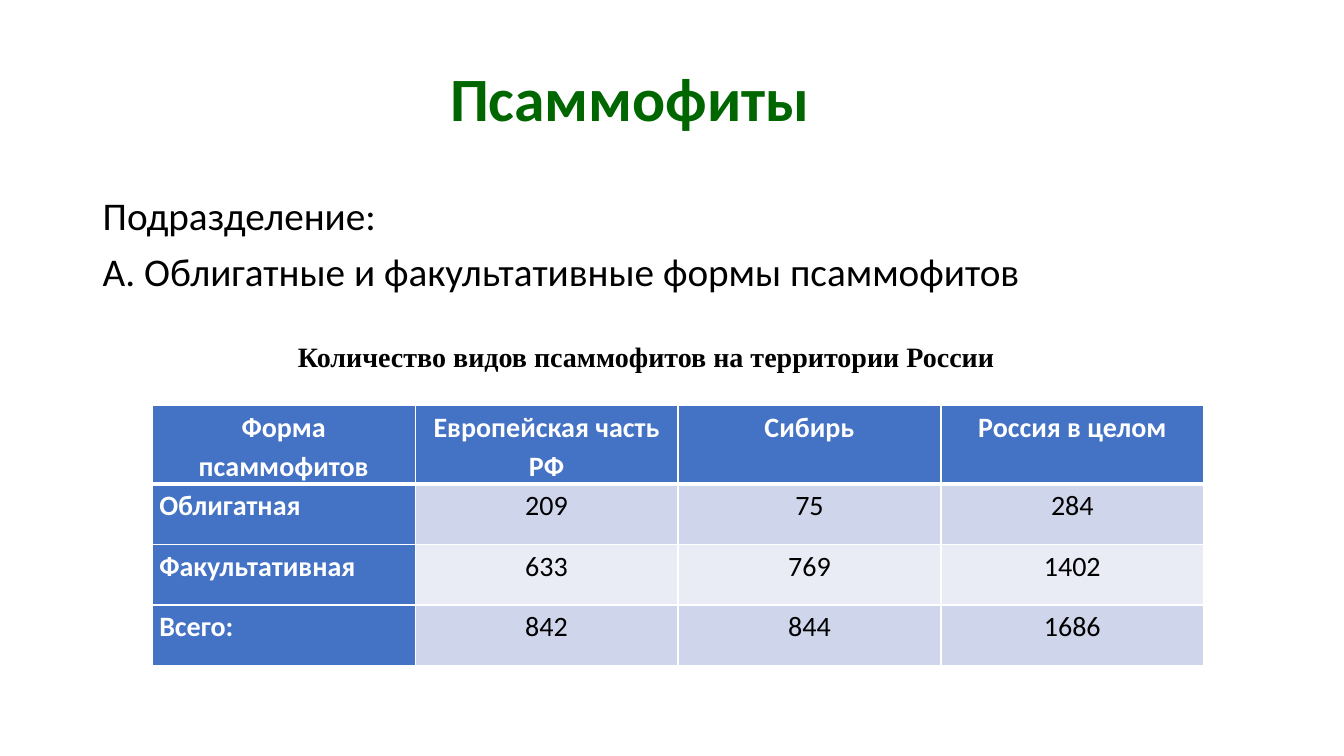
from pptx import Presentation
from pptx.dml.color import RGBColor
from pptx.enum.shapes import MSO_SHAPE
from pptx.enum.text import MSO_ANCHOR, MSO_AUTO_SIZE, PP_ALIGN
from pptx.oxml import parse_xml
from pptx.oxml.ns import nsdecls
from pptx.util import Inches, Pt

TITLE = "Псаммофиты"
BODY = ["Подразделение:", "А. Облигатные и факультативные формы псаммофитов"]
CAPTION = "Количество видов псаммофитов на территории России"
TABLE_ROWS = [
    ("Форма псаммофитов", "Европейская часть РФ", "Сибирь", "Россия в целом"),
    ("Облигатная", "209", "75", "284"),
    ("Факультативная", "633", "769", "1402"),
    ("Всего:", "842", "844", "1686"),
]

GREEN = RGBColor(0x00, 0x66, 0x00)
BLACK = RGBColor(0x00, 0x00, 0x00)
WHITE = RGBColor(0xFF, 0xFF, 0xFF)
BLUE = RGBColor(0x44, 0x72, 0xC4)
BAND_DARK = RGBColor(0xCF, 0xD5, 0xEA)
BAND_LIGHT = RGBColor(0xE9, 0xEB, 0xF5)

RECTANGLE = MSO_SHAPE.RECTANGLE
LEFT, CENTER, JUSTIFY = PP_ALIGN.LEFT, PP_ALIGN.CENTER, PP_ALIGN.JUSTIFY
TOP, MIDDLE = MSO_ANCHOR.TOP, MSO_ANCHOR.MIDDLE
GROW = MSO_AUTO_SIZE.SHAPE_TO_FIT_TEXT

TABLE_WIDTH, ROW_HEIGHT = 10.43, 0.6
CELL_MARGIN = Inches(0.07)


def style_paragraph(paragraph, size, color, bold, align, spacing, font_name="Calibri"):
    paragraph.alignment = align
    paragraph.line_spacing = spacing
    font = paragraph.font
    font.name, font.size, font.bold = font_name, Pt(size), bold
    font.color.rgb = color


def fill_text(shape, lines, anchor, *style):
    frame = shape.text_frame
    frame.word_wrap = True
    frame.vertical_anchor = anchor
    frame.text = "\n".join(lines)
    for index, paragraph in enumerate(frame.paragraphs):
        if index:
            paragraph.space_before = Pt(10)
        style_paragraph(paragraph, *style)
    return frame


def add_panel(slide, box):
    """Add a white rectangle without outline to hold text."""
    shape = slide.shapes.add_shape(RECTANGLE, *map(Inches, box))
    shape.shadow.inherit = False
    shape.fill.solid()
    shape.fill.fore_color.rgb = WHITE
    shape.line.fill.background()
    return shape


def set_borders(cell, top_width, bottom_width):
    """Draw white cell borders: 1 pt at the sides, chosen points above and below."""
    properties = cell._tc.get_or_add_tcPr()
    widths = {"lnL": 1, "lnR": 1, "lnT": top_width, "lnB": bottom_width}
    for position, (side, width) in enumerate(widths.items()):
        properties.insert(position, parse_xml(
            f'<a:{side} {nsdecls("a")} w="{Pt(width)}"><a:solidFill>'
            f'<a:srgbClr val="{WHITE}"/></a:solidFill></a:{side}>'))


def add_species_table(slide):
    row_count, column_count = len(TABLE_ROWS), len(TABLE_ROWS[0])
    table = slide.shapes.add_table(
        row_count, column_count, Inches(1.51), Inches(4.02),
        Inches(TABLE_WIDTH), Inches(ROW_HEIGHT * row_count)).table
    for row, values in enumerate(TABLE_ROWS):
        for column, value in enumerate(values):
            cell = table.cell(row, column)
            is_heading = row == 0 or column == 0
            band = BAND_DARK if row % 2 else BAND_LIGHT
            cell.fill.solid()
            cell.fill.fore_color.rgb = BLUE if is_heading else band
            cell.margin_left = cell.margin_right = CELL_MARGIN
            cell.margin_top = cell.margin_bottom = 0
            cell.text = value
            style_paragraph(cell.text_frame.paragraphs[0], 20,
                            WHITE if is_heading else BLACK, is_heading,
                            JUSTIFY if row and column == 0 else CENTER, 1.15)
            set_borders(cell, 3 if row == 1 else 1, 3 if row == 0 else 1)


def main():
    presentation = Presentation()
    presentation.slide_width, presentation.slide_height = Inches(13.33), Inches(7.5)
    slide = presentation.slides.add_slide(presentation.slide_layouts[6])

    title = add_panel(slide, (3.77, 0.28, 4.96, 1.45))
    fill_text(title, [TITLE], MIDDLE, 44, GREEN, True, CENTER, 0.9)

    body = add_panel(slide, (0.92, 1.9, 11.5, 4.86))
    body_frame = fill_text(body, BODY, TOP, 28, BLACK, False, LEFT, 0.9)
    hanging = body_frame.paragraphs[1]._p.get_or_add_pPr()
    hanging.set("marL", str(Inches(0.56)))
    hanging.set("indent", str(-Inches(0.56)))

    add_species_table(slide)

    caption = slide.shapes.add_textbox(*map(Inches, (2.76, 3.31, 7.3, 0.44)))
    caption_frame = fill_text(caption, [CAPTION], MIDDLE,
                              20, BLACK, True, CENTER, 1.0, "Times New Roman")
    caption_frame.auto_size = GROW

    presentation.save("out.pptx")


if __name__ == "__main__":
    main()
